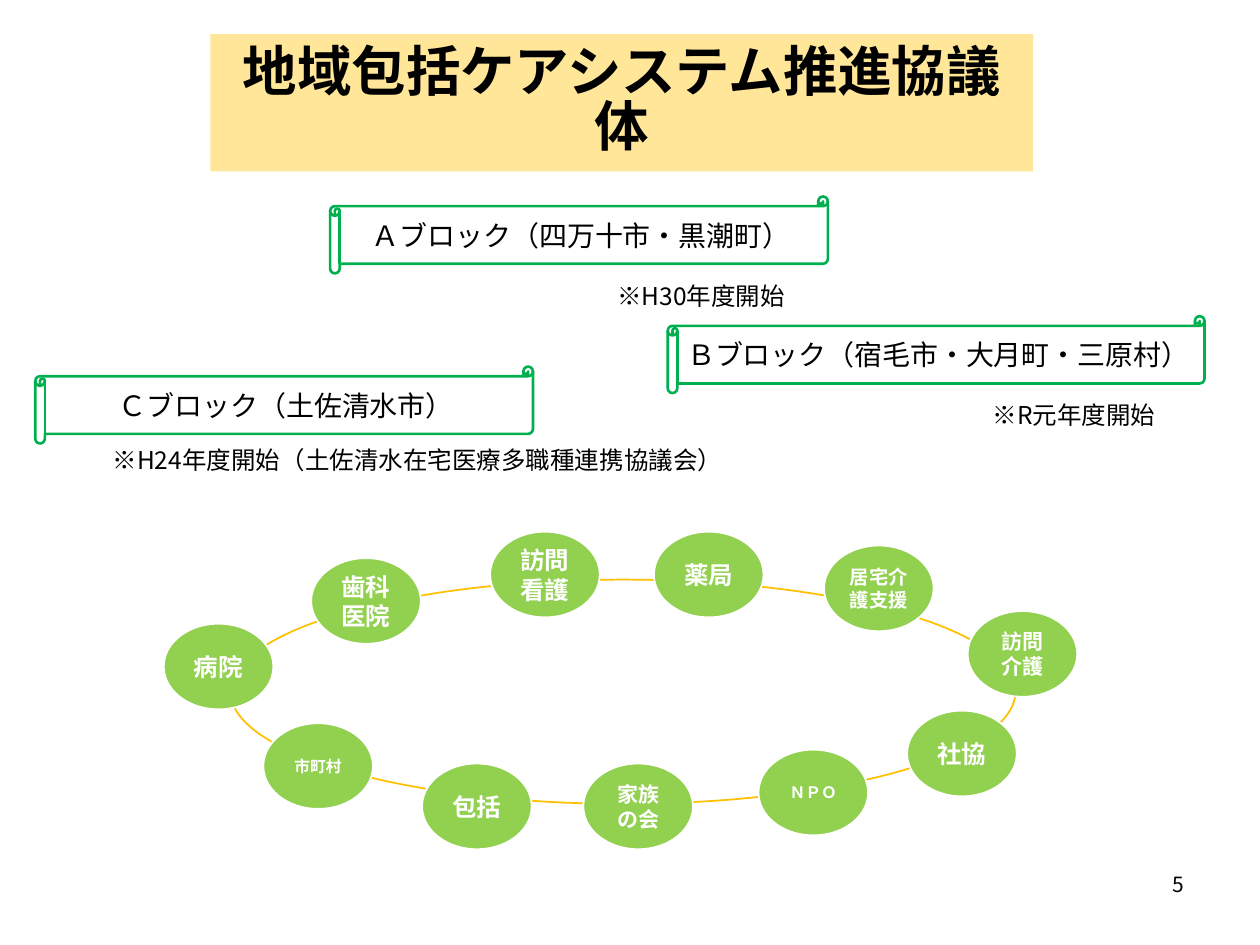
from dataclasses import dataclass

from lxml.etree import SubElement
from pptx import Presentation
from pptx.dml.color import RGBColor
from pptx.enum.shapes import MSO_SHAPE as Preset
from pptx.enum.text import MSO_ANCHOR as Anchor, MSO_AUTO_SIZE as AutoSize, PP_ALIGN as Align
from pptx.oxml.ns import qn
from pptx.util import Emu, Pt

PX = 9144  # EMU per px, 100 px to the inch


@dataclass(frozen=True)
class Theme:
    title_fill: str = "FFE699"
    ring: str = "FFC000"
    scroll: str = "00B050"
    member: str = "92D050"
    ink: str = "000000"
    paper: str = "FFFFFF"
    title_font: str = "Arial"
    font: str = "Noto Sans CJK JP"
    title_size: float = 31.1
    block_size: int = 16
    note_size: int = 14
    number_size: int = 12


@dataclass(frozen=True)
class Block:
    """A scroll naming the towns of one block."""
    left: int
    top: int
    width: int
    text: str


@dataclass(frozen=True)
class Note:
    """A free line of text."""
    left: int
    top: int
    width: int
    height: int
    text: str
    size: int
    align: Align = Align.CENTER


@dataclass(frozen=True)
class Member:
    """An organisation on the ring."""
    left: int
    top: int
    text: str
    size: int = 14


THEME = Theme()
SCROLL_HEIGHT = 61
MEMBER_WIDTH, MEMBER_HEIGHT = 87, 68

BLOCKS = [
    Block(262, 156, 395, "Ａブロック（四万十市・黒潮町）"),
    Block(530, 251, 426, "Ｂブロック（宿毛市・大月町・三原村）"),
    Block(28, 291, 395, "Ｃブロック（土佐清水市）"),
]
NOTES = [
    Note(448, 210, 217, 50, "※H30年度開始", THEME.note_size),
    Note(744, 304, 217, 50, "※R元年度開始", THEME.note_size),
    Note(59, 340, 545, 50, "※H24年度開始（土佐清水在宅医療多職種連携協議会）", THEME.note_size),
    Note(740, 682, 210, 40, "5", THEME.number_size, Align.RIGHT),
]
# Clockwise from the left end of the ring
MEMBERS = [
    Member(130, 495, "病院"),
    Member(247, 443, "歯科医院"),
    Member(389, 422, "訪問看護"),
    Member(519, 422, "薬局"),
    Member(654, 433, "居宅介護支援", 11),
    Member(768, 485, "訪問介護", 12),
    Member(720, 564, "社協"),
    Member(602, 595, "ＮＰＯ", 9),
    Member(463, 606, "家族の会", 12),
    Member(335, 606, "包括"),
    Member(209, 574, "市町村", 9),
]


def px(*lengths: int) -> list[Emu]:
    return [Emu(length * PX) for length in lengths]


def write(shape, text: str, size: float, color: str = THEME.ink, bold: bool = False,
          font: str = THEME.font, align: Align = Align.CENTER, inset: int = 7):
    """Put one formatted run in a shape and return its paragraph."""
    frame = shape.text_frame
    frame.word_wrap = True
    frame.auto_size = AutoSize.NONE
    frame.vertical_anchor = Anchor.MIDDLE
    frame.margin_left, frame.margin_right, frame.margin_top, frame.margin_bottom = px(
        inset, inset, 4, 4)
    para = frame.paragraphs[0]
    para.alignment = align
    span = para.add_run()
    span.text = text
    span.font.name, span.font.size, span.font.bold = font, Pt(size), bold
    span.font.color.rgb = RGBColor.from_string(color)
    # East Asian glyphs take their own typeface
    east_asian = SubElement(span.font._element, qn("a:ea"))
    east_asian.set("typeface", THEME.font)
    return para


def add_preset(page, preset: Preset, bounds: tuple[int, int, int, int],
               line: str, weight: float, fill: str | None = None):
    shape = page.shapes.add_shape(preset, *px(*bounds))
    shape.shadow.inherit = False
    shape.line.color.rgb = RGBColor.from_string(line)
    shape.line.width = Pt(weight)
    if fill:
        shape.fill.solid()
        shape.fill.fore_color.rgb = RGBColor.from_string(fill)
    else:
        shape.fill.background()
    return shape


def add_title(page, text: str) -> None:
    title = page.shapes.title
    title.left, title.top, title.width, title.height = px(167, 27, 653, 109)
    title.fill.solid()
    title.fill.fore_color.rgb = RGBColor.from_string(THEME.title_fill)
    para = write(title, text, THEME.title_size, bold=True, font=THEME.title_font)
    para.line_spacing = 0.84


def add_block(page, block: Block) -> None:
    bounds = (block.left, block.top, block.width, SCROLL_HEIGHT)
    scroll = add_preset(page, Preset.HORIZONTAL_SCROLL, bounds, THEME.scroll, 1.5)
    write(scroll, block.text, THEME.block_size)


def add_member(page, member: Member) -> None:
    bounds = (member.left, member.top, MEMBER_WIDTH, MEMBER_HEIGHT)
    circle = add_preset(page, Preset.FLOWCHART_CONNECTOR, bounds, THEME.paper, 1, THEME.member)
    write(circle, member.text, member.size, THEME.paper, bold=True)


def add_note(page, note: Note) -> None:
    box = page.shapes.add_textbox(*px(note.left, note.top, note.width, note.height))
    write(box, note.text, note.size, align=note.align, inset=10)


def main() -> None:
    deck = Presentation()
    deck.slide_width, deck.slide_height = px(1000, 750)
    page = deck.slides.add_slide(deck.slide_layouts[5])

    # Heading
    add_title(page, "地域包括ケアシステム推進協議体")

    # Ring that links the members
    add_preset(page, Preset.OVAL, (183, 460, 623, 178), THEME.ring, 1)

    # Blocks, members, then start years and page number
    for block in BLOCKS:
        add_block(page, block)
    for member in MEMBERS:
        add_member(page, member)
    for note in NOTES:
        add_note(page, note)

    deck.save("out.pptx")


if __name__ == "__main__":
    main()
